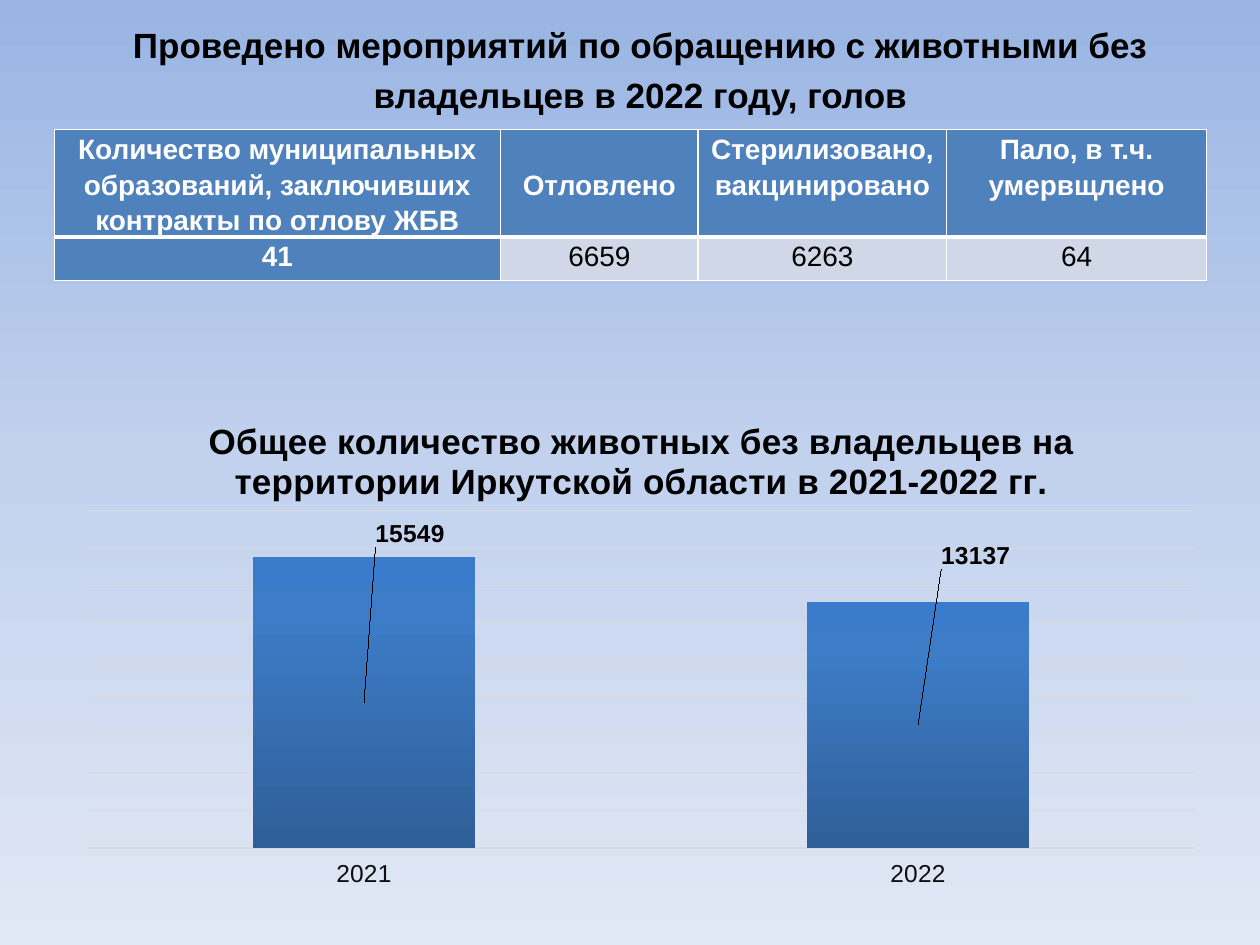
from lxml.etree import SubElement
from pptx import Presentation
from pptx.chart.data import CategoryChartData
from pptx.dml.color import RGBColor
from pptx.enum.chart import XL_CHART_TYPE, XL_LABEL_POSITION, XL_TICK_LABEL_POSITION, XL_TICK_MARK
from pptx.enum.text import MSO_ANCHOR, MSO_AUTO_SIZE, PP_ALIGN
from pptx.oxml import parse_xml
from pptx.oxml.ns import nsdecls, qn
from pptx.util import Pt

HUES = {
    "black": "000000", "ink": "0D0D0D", "white": "FFFFFF", "grid": "D9D9D9",
    "head": "4F81BD", "band": "D0D8E8",
}
SKY = [(0, "9AB5E4"), (50, "C2D1ED"), (100, "E1E8F5")]
BAR = [(0, "2F5F99"), (80, "3D7CC7"), (100, "3A7CCB")]


def put(item, vals):
    for name, val in vals.items():
        setattr(item, name, val)


def hue(name):
    return RGBColor.from_string(HUES[name])


def blend(fill, root, stops, angle):
    """Fill with a gradient of (percent, colour) stops; angle is counter-clockwise."""
    fill.gradient()
    fill.gradient_angle = angle
    group = next(root.iter(qn("a:gsLst")))
    for old in list(group):
        group.remove(old)
    for place, tone in stops:
        stop = SubElement(group, qn("a:gs"), pos=str(place * 1000))
        SubElement(stop, qn("a:srgbClr"), val=tone)


def layout(x, y, w=None, h=None):
    """Manual chart layout in shares of the chart's size."""
    inner = '<c:layoutTarget val="inner"/>' if w else ""
    modes = "" if w is None and y < 0 else '<c:xMode val="edge"/><c:yMode val="edge"/>'
    size = f'<c:w val="{w}"/><c:h val="{h}"/>' if w else ""
    return parse_xml(
        f'<c:layout {nsdecls("c")}><c:manualLayout>{inner}{modes}'
        f'<c:x val="{x}"/><c:y val="{y}"/>{size}</c:manualLayout></c:layout>')


def swap(root, spot, new):
    """Put the layout at the given place, dropping an earlier one."""
    for old in root.findall(qn("c:layout")):
        root.remove(old)
    root.insert(spot, new)


class Deck:
    face = "Arial"

    def __init__(self):
        self.prs = Presentation()
        put(self.prs, {"slide_width": Pt(720), "slide_height": Pt(540)})
        self.slide = self.prs.slides.add_slide(self.prs.slide_layouts[5])
        blend(self.slide.background.fill, self.slide._element, SKY, 270)

    def style(self, font, size, tone="black", bold=False):
        put(font, {"name": self.face, "size": Pt(size), "bold": bold})
        font.color.rgb = hue(tone)

    def title(self, text, box):
        shape = self.slide.shapes.title
        put(shape, dict(zip(("left", "top", "width", "height"), map(Pt, box))))
        frame = shape.text_frame
        put(frame, {"text": text, "word_wrap": True, "auto_size": MSO_AUTO_SIZE.NONE,
                    "vertical_anchor": MSO_ANCHOR.MIDDLE,
                    "margin_top": Pt(20), "margin_bottom": 0})
        para = frame.paragraphs[0]
        put(para, {"alignment": PP_ALIGN.CENTER, "line_spacing": 1.2})
        self.style(para.runs[0].font, 20, bold=True)

    def edge(self, cell, thick):
        """Draw white cell borders; thick names the side that is 3 pt wide."""
        props = cell._tc.get_or_add_tcPr()
        for spot, side in enumerate("LRTB"):
            width = Pt(3 if side == thick else 1)
            props.insert(spot, parse_xml(
                f'<a:ln{side} {nsdecls("a")} w="{width}"><a:solidFill>'
                f'<a:srgbClr val="{HUES["white"]}"/></a:solidFill></a:ln{side}>'))

    def cell(self, cell, text, head, thick, anchor):
        put(cell, {"text": text, "margin_left": Pt(3.6), "margin_right": Pt(3.6),
                   "margin_top": 0, "margin_bottom": 0, "vertical_anchor": anchor})
        para = cell.text_frame.paragraphs[0]
        put(para, {"alignment": PP_ALIGN.CENTER, "line_spacing": 1.15})
        self.style(para.runs[0].font, 16, "white" if head else "black", head)
        cell.fill.solid()
        cell.fill.fore_color.rgb = hue("head" if head else "band")
        self.edge(cell, thick)

    def table(self, rows, box, widths, heights):
        grid = self.slide.shapes.add_table(len(rows), len(widths), *map(Pt, box)).table
        for col, width in zip(grid.columns, widths):
            col.width = Pt(width)
        for row, height in zip(grid.rows, heights):
            row.height = Pt(height)
        for r, row in enumerate(rows):
            for c, text in enumerate(row):
                anchor = MSO_ANCHOR.MIDDLE if (r, c) == (0, 1) else MSO_ANCHOR.TOP
                self.cell(grid.cell(r, c), text, r == 0 or c == 0, "T" if r else "B", anchor)

    def chart(self, name, counts, shifts, box):
        data = CategoryChartData()
        data.categories = list(counts)
        data.add_series("Series 1", list(counts.values()))
        chart = self.slide.shapes.add_chart(
            XL_CHART_TYPE.COLUMN_STACKED, *map(Pt, box), data).chart
        put(chart, {"has_legend": False, "has_title": True})
        put(chart.font, {"name": "Calibri", "size": Pt(10)})
        chart.font.color.rgb = hue("black")
        chart.chart_title.text_frame.text = name
        self.style(chart.chart_title.text_frame.paragraphs[0].runs[0].font, 20, bold=True)
        swap(chart.chart_title._element, 1, layout(0.12, 0.04))
        swap(chart._chartSpace.chart.plotArea, 0, layout(0.02, 0.238, 0.961, 0.679))
        self.axes(chart)
        self.bars(chart.plots[0], shifts)

    def axes(self, chart):
        years, heads = chart.category_axis, chart.value_axis
        put(years, {"major_tick_mark": XL_TICK_MARK.NONE,
                    "tick_label_position": XL_TICK_LABEL_POSITION.LOW})
        self.style(years.tick_labels.font, 14, "ink")
        put(heads, {"minimum_scale": 0, "maximum_scale": 18000, "major_unit": 2000,
                    "has_major_gridlines": True, "visible": False})
        for line, width in ((years.format.line, 1), (heads.major_gridlines.format.line, 0.75)):
            line.color.rgb = hue("grid")
            line.width = Pt(width)

    def bars(self, plot, shifts):
        put(plot, {"gap_width": 150, "overlap": 100, "vary_by_categories": False})
        bars = plot.series[0]
        blend(bars.format.fill, bars._element, BAR, 90)
        put(bars.data_labels, {"show_value": True, "position": XL_LABEL_POSITION.CENTER})
        self.style(bars.data_labels.font, 14, bold=True)
        for i, shift in enumerate(shifts):
            label = bars.points[i].data_label
            self.style(label.font, 14, bold=True)
            label.position = XL_LABEL_POSITION.CENTER
            swap(label._get_or_add_dLbl(), 1, layout(*shift))


def main():
    deck = Deck()
    deck.title("Проведено мероприятий по обращению с животными без владельцев в 2022 году, голов",
               (36.5, 0, 659, 54.7))
    deck.table(
        [("Количество муниципальных образований, заключивших контракты по отлову ЖБВ",
          "Отловлено", "Стерилизовано, вакцинировано", "Пало, в т.ч. умервщлено"),
         ("41", "6659", "6263", "64")],
        (31, 74, 659, 91.5), (255, 113, 142, 148.5), (44, 25))
    deck.chart("Общее количество животных без владельцев на территории Иркутской области в 2021-2022 гг.",
               {"2021": 15549, "2022": 13137}, [(0.04, -0.34), (0.05, -0.34)],
               (36.5, 224.5, 659, 283.5))
    deck.prs.save("out.pptx")


if __name__ == "__main__":
    main()
